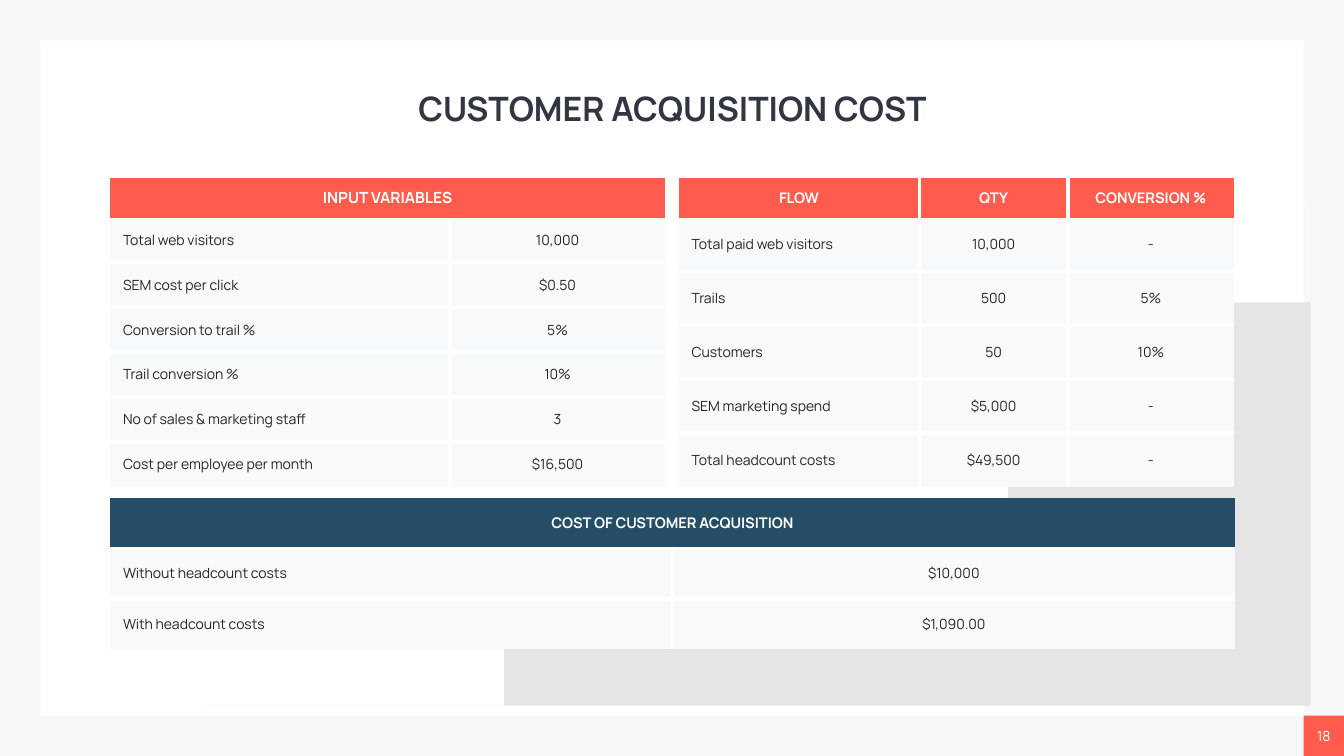
import pptx
import pptx.dml.color
import pptx.enum.shapes
import pptx.enum.text
import pptx.oxml.ns
import pptx.util
from lxml import etree

Inches = pptx.util.Inches
Pt = pptx.util.Pt
ALIGN = pptx.enum.text.PP_ALIGN
MIDDLE = pptx.enum.text.MSO_ANCHOR.MIDDLE
RECTANGLE = pptx.enum.shapes.MSO_SHAPE.RECTANGLE

TITLE = "CUSTOMER ACQUISITION COST"
PAGE_NUMBER = "18"

# A header with a single entry spans the whole table.
TABLES = [
    dict(
        left=1.09, top=4.94, columns=[5.58, 5.58], rows=[0.5, 0.5, 0.5],
        header_fill="navy", header_size="small_header", header_gap=True,
        cells=[
            ["COST OF CUSTOMER ACQUISITION"],
            ["Without headcount costs", "$10,000"],
            ["With headcount costs", "$1,090.00"],
        ],
    ),
    dict(
        left=1.09, top=1.77, columns=[3.37, 2.14], rows=[0.39] + [0.445] * 6,
        header_fill="coral", header_size="header", header_gap=False,
        cells=[
            ["INPUT VARIABLES"],
            ["Total web visitors", "10,000"],
            ["SEM cost per click", "$0.50"],
            ["Conversion to trail %", "5%"],
            ["Trail conversion %", "10%"],
            ["No of sales & marketing staff", "3"],
            ["Cost per employee per month", "$16,500"],
        ],
    ),
    dict(
        left=6.73, top=1.77, columns=[2.39, 1.47, 1.65], rows=[0.39] + [0.535] * 5,
        header_fill="coral", header_size="small_header", header_gap=False,
        cells=[
            ["FLOW", "QTY", "CONVERSION %"],
            ["Total paid web visitors", "10,000", "-"],
            ["Trails", "500", "5%"],
            ["Customers", "50", "10%"],
            ["SEM marketing spend", "$5,000", "-"],
            ["Total headcount costs", "$49,500", "-"],
        ],
    ),
]

# Start point, then Bézier segments as (control, control, end).
WAVE_START = (12.6, 2.54)
WAVE_CURVES = [
    ((11.41, 3.8), (9.15, 5.14), (6.41, 6.08)),
    ((4.91, 6.59), (3.45, 6.92), (2.18, 7.07)),
]
CURVE_STEPS = 24

THEME = dict(
    font="Manrope",
    colors=dict(
        background="F6F8FA", panel="FFFFFF", wave="E5E5E5", title="323643",
        body="252525", cell="F7F9FB", coral="FF5C4D", navy="234E65", white="FFFFFF",
    ),
    sizes=dict(title=24, header=11, small_header=10.5, body=10),
    border=3,
)


def color(name):
    return pptx.dml.color.RGBColor.from_string(THEME["colors"][name])


def paint(target, name):
    target.fill.solid()
    target.fill.fore_color.rgb = color(name)


def write(frame, text, size="body", ink="body", bold=False, align=ALIGN.CENTER):
    paragraph = frame.paragraphs[0]
    paragraph.alignment = align
    run = paragraph.add_run()
    run.text = text
    run.font.name = THEME["font"]
    run.font.size = Pt(THEME["sizes"][size])
    run.font.bold = bold
    run.font.color.rgb = color(ink)


def finish(shape, fill):
    """Give a shape a flat fill with no line or shadow."""
    shape.shadow.inherit = False
    paint(shape, fill)
    shape.line.fill.background()


def add_rectangle(slide, left, top, width, height, fill):
    shape = slide.shapes.add_shape(
        RECTANGLE, Inches(left), Inches(top), Inches(width), Inches(height))
    finish(shape, fill)
    return shape


def curve_points(start, first, second, end):
    for step in range(1, CURVE_STEPS + 1):
        t = step / CURVE_STEPS
        u = 1 - t
        yield tuple(
            u**3 * a + 3 * u**2 * t * b + 3 * u * t**2 * c + t**3 * d
            for a, b, c, d in zip(start, first, second, end))


def add_wave(slide):
    points = [WAVE_START]
    for curve in WAVE_CURVES:
        points.extend(curve_points(points[-1], *curve))
    points += [(1.88, 7.1), (12.93, 7.1)]
    builder = slide.shapes.build_freeform(12.93, 2.16, scale=Inches(1))
    builder.add_line_segments(points, close=True)
    finish(builder.convert_to_shape(), "wave")


def set_borders(cell, visible):
    """Draw white borders on the visible sides and clear the others."""
    properties = cell._tc.get_or_add_tcPr()
    for side in "LRTB":
        line = etree.SubElement(properties, pptx.oxml.ns.qn(f"a:ln{side}"))
        if side in visible:
            line.set("w", str(Pt(THEME["border"])))
            fill = etree.SubElement(line, pptx.oxml.ns.qn("a:solidFill"))
            tint = etree.SubElement(fill, pptx.oxml.ns.qn("a:srgbClr"))
            tint.set("val", THEME["colors"]["white"])
        else:
            etree.SubElement(line, pptx.oxml.ns.qn("a:noFill"))


def add_grid(slide, left, top, columns, rows, header_fill, header_size, header_gap, cells):
    frame = slide.shapes.add_table(
        len(rows), len(columns), Inches(left), Inches(top),
        Inches(sum(columns)), Inches(sum(rows)))
    table = frame.table
    table.first_row = table.horz_banding = False
    for column, width in zip(table.columns, columns):
        column.width = Inches(width)
    for row, height in zip(table.rows, rows):
        row.height = Inches(height)

    spanning = len(cells[0]) == 1
    if spanning:
        table.cell(0, 0).merge(table.cell(0, len(columns) - 1))
    first_gap = 0 if header_gap else 1
    for r in range(len(rows)):
        for c in range(len(columns)):
            cell = table.cell(r, c)
            split = r > 0 or not spanning
            edges = dict(
                L=split and c > 0,
                R=split and c < len(columns) - 1,
                T=r > first_gap,
                B=first_gap <= r < len(rows) - 1,
            )
            set_borders(cell, [side for side, shown in edges.items() if shown])
            paint(cell, "cell" if r else header_fill)
            cell.vertical_anchor = MIDDLE
            cell.margin_left = cell.margin_right = Inches(0.13)
            cell.margin_top = cell.margin_bottom = Inches(0.07)
            if c >= len(cells[r]):
                continue
            if r == 0:
                write(cell.text_frame, cells[r][c], size=header_size, ink="white", bold=True)
            else:
                write(cell.text_frame, cells[r][c], align=ALIGN.CENTER if c else ALIGN.LEFT)


def main():
    presentation = pptx.Presentation()
    presentation.slide_width = Inches(13.33)
    presentation.slide_height = Inches(7.5)
    slide = presentation.slides.add_slide(presentation.slide_layouts[6])
    paint(slide.background, "background")

    add_rectangle(slide, 0.4, 0.4, 12.53, 6.7, "panel")
    add_wave(slide)

    title = slide.shapes.add_textbox(Inches(2.04), Inches(0.81), Inches(9.26), Inches(0.52))
    title.text_frame.word_wrap = True
    title.text_frame.vertical_anchor = MIDDLE
    write(title.text_frame, TITLE, size="title", ink="title", bold=True)

    for table in TABLES:
        add_grid(slide, **table)

    badge = add_rectangle(slide, 12.93, 7.1, 0.4, 0.4, "coral")
    badge.text_frame.vertical_anchor = MIDDLE
    write(badge.text_frame, PAGE_NUMBER, ink="white")

    presentation.save("out.pptx")


if __name__ == "__main__":
    main()
